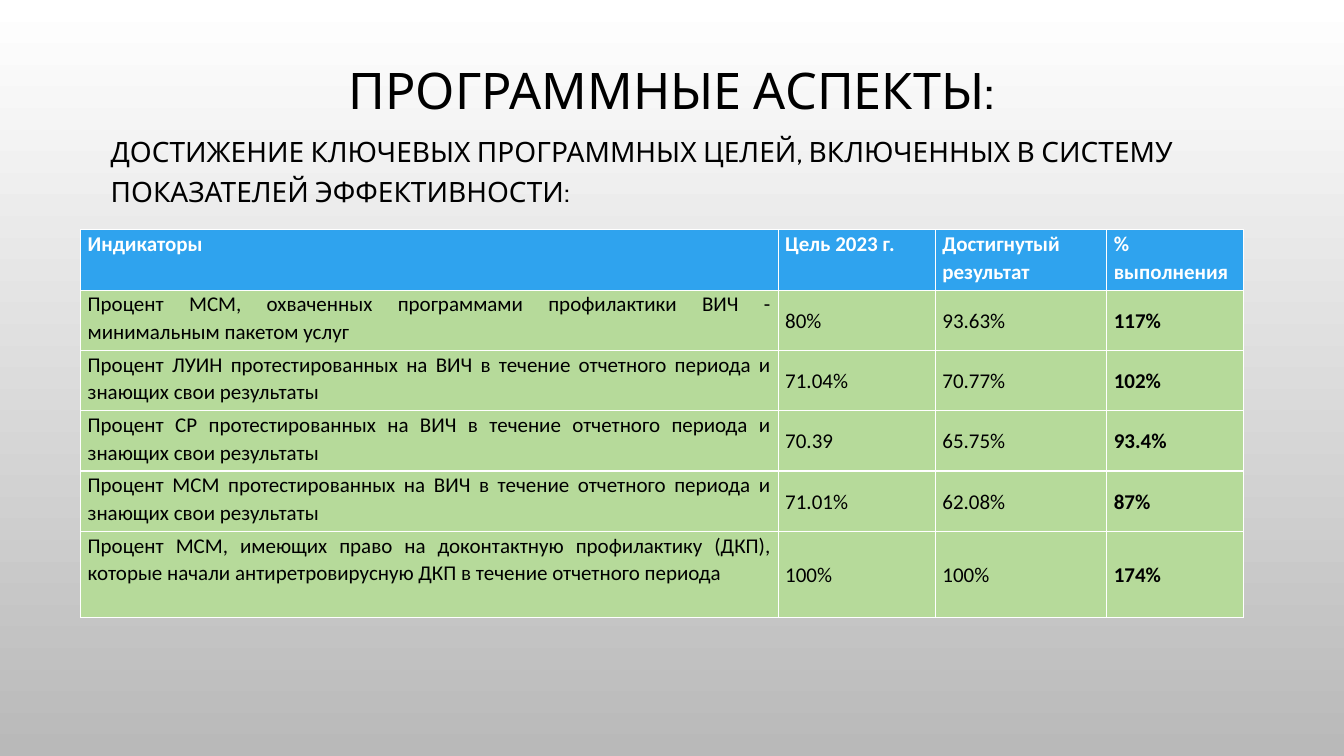
from pptx import Presentation
from pptx import util as u
from pptx.dml import color
from pptx.enum import text

HUES = {"black": "000000", "white": "FFFFFF", "grey": "B9B9B9",
        "blue": "2FA3EE", "green": "B6DA9A"}
ALIGN = text.PP_ALIGN
ANCHOR = text.MSO_ANCHOR


def rgb(hue):
    return color.RGBColor.from_string(HUES[hue])


class Deck:
    head_font = "Cabin"
    cell_font = "Calibri"
    cell_size = 15

    def __init__(self):
        self.prs = Presentation()
        self.prs.slide_width = u.Cm(33.87)
        self.prs.slide_height = u.Cm(19.05)
        self.slide = self.prs.slides.add_slide(self.prs.slide_layouts[6])

    def shade(self, top, base):
        fill = self.slide.background.fill
        fill.gradient()
        fill.gradient_angle = 270
        for stop, hue in zip(fill.gradient_stops, (top, base)):
            stop.color.rgb = rgb(hue)

    def line(self, frame, words, font, size, hue, align, space, bold=False):
        para = frame.paragraphs[0]
        para.alignment = align
        para.line_spacing = space
        run = para.add_run()
        run.text = words
        run.font.name = font
        run.font.size = u.Pt(size)
        run.font.bold = bold
        run.font.color.rgb = rgb(hue)
        return para

    def label(self, words, box, size, align, space, anchor):
        frame = self.slide.shapes.add_textbox(*map(u.Cm, box)).text_frame
        frame.word_wrap = True
        frame.vertical_anchor = anchor
        self.line(frame, words, self.head_font, size, "black", align, space)

    def cell(self, cell, words, fill, hue, bold, anchor):
        cell.margin_left = cell.margin_right = u.Cm(0.18)
        cell.margin_top = cell.margin_bottom = 0
        cell.vertical_anchor = anchor
        cell.fill.solid()
        cell.fill.fore_color.rgb = rgb(fill)
        para = self.line(cell.text_frame, words, self.cell_font,
                         self.cell_size, hue, ALIGN.JUSTIFY, 1.07, bold)
        para.space_after = u.Pt(8)

    def table(self, rows, left, top, widths, heights):
        # The default table style draws the white rules
        size = (left, top, sum(widths), sum(heights))
        grid = self.slide.shapes.add_table(
            len(rows), len(widths), *map(u.Cm, size)).table
        for col, width in zip(grid.columns, widths):
            col.width = u.Cm(width)
        for row, height in zip(grid.rows, heights):
            row.height = u.Cm(height)
        last = len(widths) - 1
        for r, row in enumerate(rows):
            for c, words in enumerate(row):
                head = r == 0
                self.cell(grid.cell(r, c), words,
                          "blue" if head else "green",
                          "white" if head else "black",
                          head or c == last,
                          ANCHOR.TOP if head or c == 0 else ANCHOR.MIDDLE)

    def save(self):
        self.prs.save("out.pptx")


TESTED = "протестированных на ВИЧ в течение отчетного периода и знающих свои результаты"
ROWS = [
    ("Индикаторы", "Цель 2023 г.", "Достигнутый результат", "% выполнения"),
    ("Процент МСМ, охваченных программами профилактики ВИЧ - "
     "минимальным пакетом услуг", "80%", "93.63%", "117%"),
    (f"Процент ЛУИН {TESTED}", "71.04%", "70.77%", "102%"),
    (f"Процент СР {TESTED}", "70.39", "65.75%", "93.4%"),
    (f"Процент МСМ {TESTED}", "71.01%", "62.08%", "87%"),
    ("Процент МСМ, имеющих право на доконтактную профилактику (ДКП), "
     "которые начали антиретровирусную ДКП в течение отчетного периода",
     "100%", "100%", "174%"),
]


def main():
    deck = Deck()
    deck.shade("white", "grey")

    # Headings
    deck.label("ПРОГРАММНЫЕ АСПЕКТЫ:", (2.54, 0.79, 28.78, 3.12),
               36, ALIGN.CENTER, 0.9, ANCHOR.MIDDLE)
    deck.label("ДОСТИЖЕНИЕ КЛЮЧЕВЫХ ПРОГРАММНЫХ ЦЕЛЕЙ, ВКЛЮЧЕННЫХ В СИСТЕМУ "
               "ПОКАЗАТЕЛЕЙ ЭФФЕКТИВНОСТИ:", (2.54, 3.1, 28.78, 15.16),
               20, ALIGN.LEFT, 1.2, ANCHOR.TOP)

    # Indicators
    deck.table(ROWS, 2.03, 5.79, (17.58, 3.96, 4.32, 3.45),
               [1.52] * 5 + [2.16])
    deck.save()


if __name__ == "__main__":
    main()
